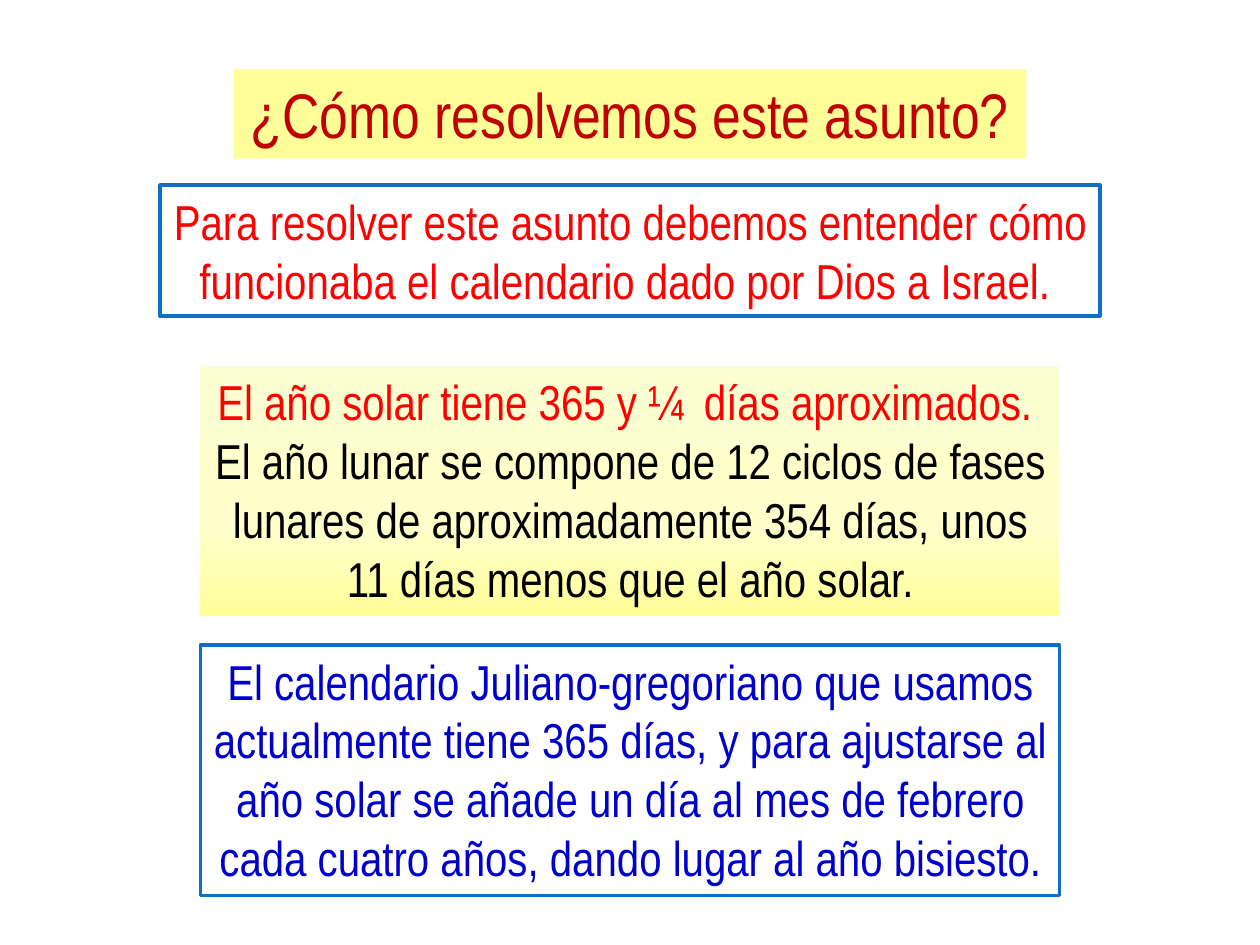
from copy import deepcopy
from dataclasses import dataclass
from typing import Optional

from lxml import etree
from pptx import Presentation
from pptx import util as u
from pptx.enum import shapes, text
from pptx.oxml import ns

COLOURS = {
    "white": "FFFFFF",
    "border": "0F6FC6",
    "yellow": "FFFF99",
    "cream": "FFFFCC",
    "pale": "FBFFD1",
    "red": "FF0000",
    "dark_red": "C00000",
    "blue": "0000CC",
    "black": "000000",
}
PAGE_WIDTH = 25.4
PAGE_HEIGHT = 19.05
FRAME_FORMAT = {
    "word_wrap": True,
    "auto_size": text.MSO_AUTO_SIZE.SHAPE_TO_FIT_TEXT,
    "vertical_anchor": text.MSO_ANCHOR.TOP,
}


@dataclass(frozen=True)
class Line:
    words: str
    colour: str


@dataclass(frozen=True)
class Panel:
    top: float
    width: float
    height: float
    lines: tuple[Line, ...]
    fills: tuple[tuple[int, str], ...] = ((0, "white"),)
    border: Optional[str] = None
    size: int = 28
    outline: float = 1.25


PANELS = (
    Panel(3.73, 18.95, 2.64, (
        Line("Para resolver este asunto debemos entender cómo funcionaba "
             "el calendario dado por Dios a Israel. ", "red"),
    ), border="border"),
    Panel(7.37, 17.32, 5.05, (
        Line("El año solar tiene 365 y ¼  días aproximados. ", "red"),
        Line("El año lunar se compone de 12 ciclos de fases lunares de "
             "aproximadamente 354 días, unos 11 días menos que el año solar.", "black"),
    ), fills=((0, "yellow"), (35, "cream"), (100, "pale"))),
    Panel(13, 17.32, 5.05, (
        Line("El calendario Juliano-gregoriano que usamos actualmente tiene "
             "365 días, y para ajustarse al año solar se añade un día al mes "
             "de febrero cada cuatro años, dando lugar al año bisiesto.", "blue"),
    ), border="border"),
    Panel(1.4, 15.98, 1.8, (
        Line("¿Cómo resolvemos este asunto?", "dark_red"),
    ), fills=((0, "yellow"),), size=36, outline=1.5),
)


def rgb(name: str):
    return ns_colour.from_string(COLOURS[name])


def apply(target, values: dict) -> None:
    for name, value in values.items():
        setattr(target, name, value)


def add_solid(parent, colour: str) -> None:
    solid = etree.SubElement(parent, ns.qn("a:solidFill"))
    etree.SubElement(solid, ns.qn("a:srgbClr"), val=COLOURS[colour])


def fill_box(box, fills: tuple[tuple[int, str], ...]) -> None:
    if len(fills) == 1:
        box.fill.solid()
        box.fill.fore_color.rgb = rgb(fills[0][1])
        return
    box.fill.gradient()
    box.fill.gradient_angle = 90
    stops = box._element.spPr.find(".//" + ns.qn("a:gsLst"))
    stops.append(deepcopy(stops[0]))
    for stop, (position, colour) in zip(box.fill.gradient_stops, fills):
        stop.position = position / 100
        stop.color.rgb = rgb(colour)


def write_line(para, line: Line, panel: Panel) -> None:
    para.alignment = text.PP_ALIGN.CENTER
    span = para.add_run()
    span.text = line.words
    apply(span.font, {"size": u.Pt(panel.size), "name": "Arial Narrow"})
    span.font.color.rgb = rgb(line.colour)
    outline = etree.Element(ns.qn("a:ln"), w=str(u.Pt(panel.outline)))
    add_solid(outline, line.colour)
    span._r.get_or_add_rPr().insert(0, outline)


def draw_panel(page, panel: Panel) -> None:
    box = page.shapes.add_shape(
        shapes.MSO_SHAPE.RECTANGLE,
        u.Cm((PAGE_WIDTH - panel.width) / 2), u.Cm(panel.top),
        u.Cm(panel.width), u.Cm(panel.height),
    )
    box.shadow.inherit = False
    fill_box(box, panel.fills)
    if panel.border:
        box.line.color.rgb = rgb(panel.border)
        box.line.width = u.Pt(2)
    else:
        box.line.fill.background()
    frame = box.text_frame
    apply(frame, FRAME_FORMAT)
    for index, line in enumerate(panel.lines):
        para = frame.add_paragraph() if index else frame.paragraphs[0]
        write_line(para, line, panel)


def main() -> None:
    deck = Presentation()
    apply(deck, {"slide_width": u.Cm(PAGE_WIDTH), "slide_height": u.Cm(PAGE_HEIGHT)})
    page = deck.slides.add_slide(deck.slide_layouts[6])
    for panel in PANELS:
        draw_panel(page, panel)
    deck.save("out.pptx")


from pptx.dml.color import RGBColor as ns_colour

if __name__ == "__main__":
    main()
